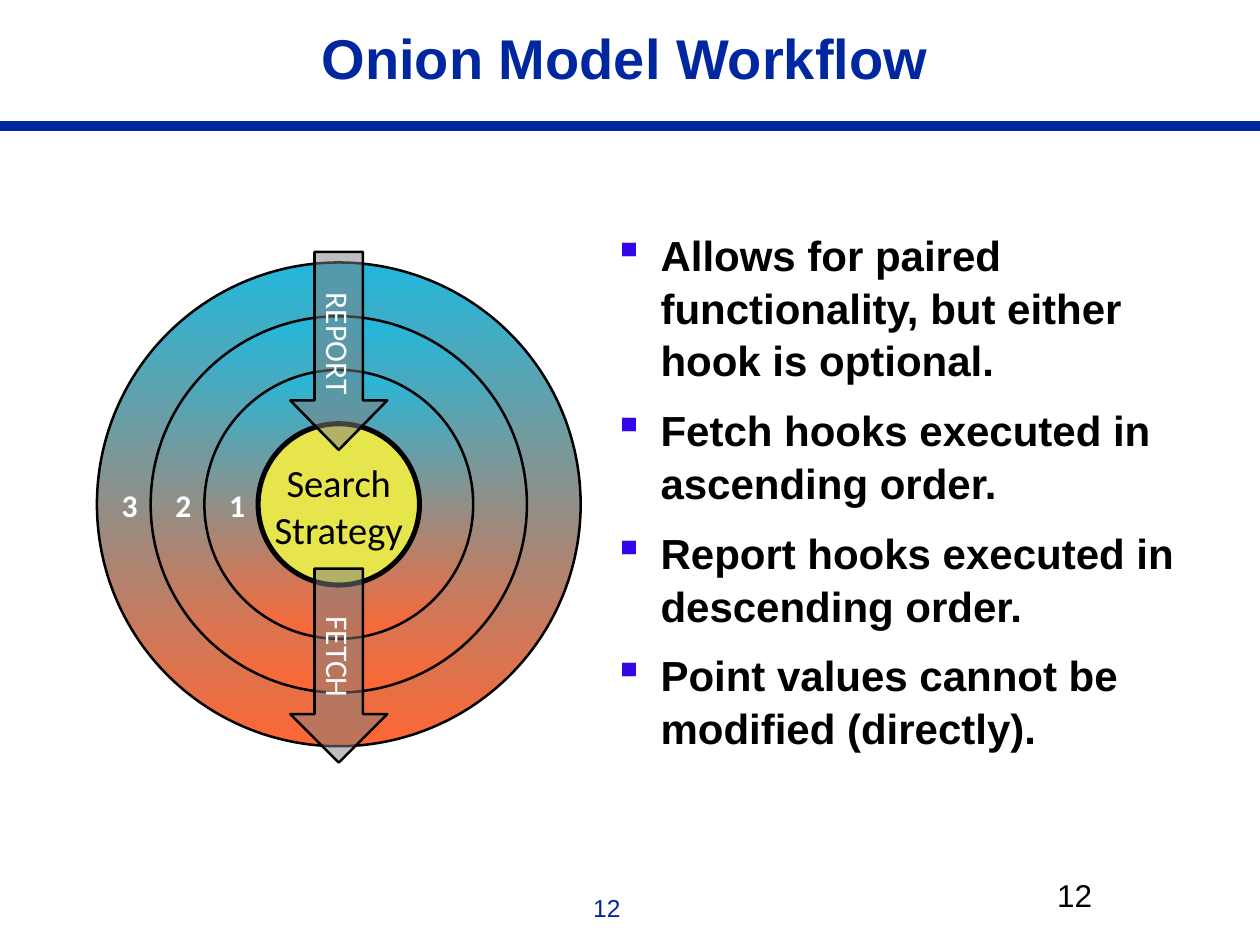
from lxml.etree import SubElement
from pptx import Presentation
from pptx.dml.color import RGBColor
from pptx.enum.shapes import MSO_CONNECTOR as Connector, MSO_SHAPE as Shape
from pptx.enum.text import MSO_ANCHOR as Anchor, PP_ALIGN as Align
from pptx.oxml.ns import qn
from pptx.util import Pt

COLORS = {
    "navy": "00279F", "black": "000000", "white": "FFFFFF", "bullet": "3406E9",
    "report": "23B8DC", "fetch": "FF6633", "core": "E6E64C", "arrow": "808080",
}
CENTER_X, CENTER_Y = 193.6, 288.2
CORE_SIZE, RING_WIDTH = 92.2, 30.7
INSETS = (6.5, 3.6, 6.5, 3.6)

HOOK_RULES = (
    "Allows for paired functionality, but either hook is optional.",
    "Fetch hooks executed in ascending order.",
    "Report hooks executed in descending order.",
    "Point values cannot be modified (directly).",
)
# label, top, height, head ratio, text indent
FLOW_ARROWS = (
    ("FETCH", 324.9, 110.9, 0.5, 20.3),
    ("REPORT", 143.9, 113.2, 0.51, 16.3),
)


def rgb(name):
    return RGBColor.from_string(COLORS[name])


def apply(target, values):
    for attribute, value in values.items():
        setattr(target, attribute, value)


def write(frame, lines, size, color, font="Arial", bold=False, insets=INSETS,
          wrap=True, anchor=Anchor.TOP, bullet=None, indent=0, **paragraph_format):
    """Fill a text frame with one paragraph per line."""
    sides = ("margin_left", "margin_top", "margin_right", "margin_bottom")
    apply(frame, dict(zip(sides, map(Pt, insets))))
    apply(frame, {"word_wrap": wrap, "vertical_anchor": anchor})
    for number, line in enumerate(lines):
        paragraph = frame.add_paragraph() if number else frame.paragraphs[0]
        properties = paragraph._p.get_or_add_pPr()
        properties.set("marL", str(Pt(indent)))
        if bullet:
            properties.set("indent", str(-Pt(indent)))
            bullet_color = SubElement(properties, qn("a:buClr"))
            SubElement(bullet_color, qn("a:srgbClr"), val=COLORS["bullet"])
            SubElement(properties, qn("a:buChar"), char=bullet)
        apply(paragraph, paragraph_format)
        if not number:
            paragraph.space_before = Pt(0)
        run = paragraph.add_run()
        run.text = line
        apply(run.font, {"name": font, "size": Pt(size), "bold": bold})
        run.font.color.rgb = rgb(color)


def add_text(slide, box, lines, size, color, **text_format):
    label = slide.shapes.add_textbox(*map(Pt, box))
    write(label.text_frame, lines, size, color, **text_format)


def add_outlined(slide, kind, box, line_width=1.45):
    part = slide.shapes.add_shape(kind, *map(Pt, box))
    part.shadow.inherit = False
    part.line.color.rgb = rgb("black")
    part.line.width = Pt(line_width)
    return part


def add_circle(slide, diameter, line_width=1.45):
    corner = (CENTER_X - diameter / 2, CENTER_Y - diameter / 2)
    return add_outlined(slide, Shape.OVAL, (*corner, diameter, diameter), line_width)


def add_ring(slide, level):
    ring = add_circle(slide, CORE_SIZE + 2 * RING_WIDTH * level)
    ring.fill.gradient()
    ring.fill.gradient_angle = 270
    for stop, color, position in zip(ring.fill.gradient_stops, ("report", "fetch"), (0, 1)):
        stop.color.rgb = rgb(color)
        stop.position = position


def add_core(slide):
    core = add_circle(slide, CORE_SIZE, 2.89)
    core.fill.solid()
    core.fill.fore_color.rgb = rgb("core")
    write(core.text_frame, ("Search", "Strategy"), 22, "black", font="Calibri",
          insets=(7.9, 5.8, 7.9, 4.3), wrap=False, anchor=Anchor.MIDDLE,
          alignment=Align.CENTER)


def add_flow_arrow(slide, label, top, height, head, indent):
    width = 55.4
    arrow = add_outlined(slide, Shape.DOWN_ARROW,
                         (CENTER_X - width / 2, top, width, height))
    arrow.adjustments[0], arrow.adjustments[1] = 0.5, head
    arrow.fill.solid()
    arrow.fill.fore_color.rgb = rgb("arrow")
    fill_color = arrow._element.spPr.find(qn("a:solidFill"))[0]
    SubElement(fill_color, qn("a:alpha"), val="50000")
    write(arrow.text_frame, (label,), 18, "white", font="Calibri", wrap=False,
          anchor=Anchor.MIDDLE, indent=indent, alignment=Align.LEFT)
    arrow.text_frame._txBody.bodyPr.set("vert", "vert")


def add_level_number(slide, level):
    middle = CENTER_X - CORE_SIZE / 2 - RING_WIDTH * (level - 0.5) + 0.6
    add_text(slide, (middle - 8.3, 274.3, 16.6, 28.1), (str(level),), 18, "white",
             font="Calibri", bold=True, alignment=Align.CENTER)


def add_header_rule(slide):
    rule = slide.shapes.add_connector(Connector.STRAIGHT, Pt(0), Pt(72), Pt(720), Pt(72))
    rule.line.color.rgb = rgb("navy")
    rule.line.width = Pt(6.13)
    SubElement(rule._element.spPr, qn("a:effectLst"))


def main():
    deck = Presentation()
    apply(deck, {"slide_width": Pt(720), "slide_height": Pt(540)})
    slide = deck.slides.add_slide(deck.slide_layouts[6])

    # Header and page numbers
    add_header_rule(slide)
    add_text(slide, (331.9, 506.9, 31.7, 23.8), ("12",), 14, "navy",
             insets=(7.2, 3.6, 7.2, 3.6), wrap=False)
    add_text(slide, (18, 5.8, 678.2, 59.8), ("Onion Model Workflow",), 32, "navy",
             bold=True, insets=(7.2, 2.9, 7.2, 3.6), anchor=Anchor.MIDDLE,
             alignment=Align.CENTER, line_spacing=0.85)

    # Rules for the hooks
    add_text(slide, (343.4, 126, 340.6, 356.4), HOOK_RULES, 24, "black", bold=True,
             insets=(7.2, 3.6, 7.2, 3.6), bullet="▪", indent=27,
             line_spacing=1.05, space_before=Pt(9.6))
    add_text(slide, (597.6, 496.8, 43.9, 36), ("12",), 18, "black")

    # Onion diagram, outermost ring first
    for level in (3, 2, 1):
        add_ring(slide, level)
    add_core(slide)
    for flow in FLOW_ARROWS:
        add_flow_arrow(slide, *flow)
    for level in (1, 2, 3):
        add_level_number(slide, level)

    deck.save("out.pptx")


if __name__ == "__main__":
    main()
